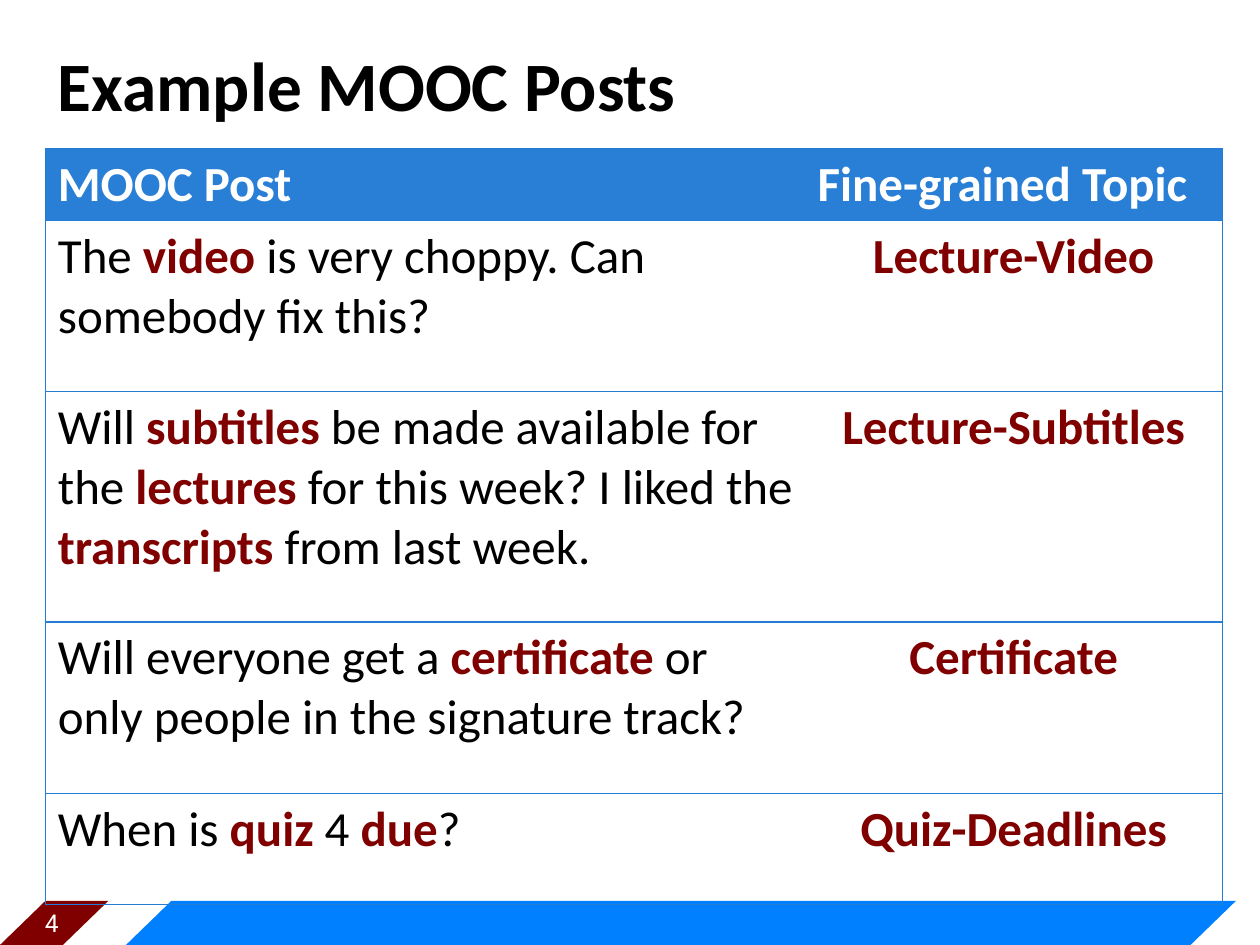
"""Build a slide with a table of example MOOC posts and their topics."""
from lxml import etree
from pptx import Presentation
from pptx.dml.color import RGBColor
from pptx.enum.shapes import MSO_SHAPE
from pptx.enum.text import MSO_ANCHOR, PP_ALIGN
from pptx.oxml.ns import qn
from pptx.util import Inches, Pt

PARALLELOGRAM = MSO_SHAPE.PARALLELOGRAM
MIDDLE = MSO_ANCHOR.MIDDLE
LEFT, CENTER = PP_ALIGN.LEFT, PP_ALIGN.CENTER
BLACK = RGBColor(0x00, 0x00, 0x00)
WHITE = RGBColor(0xFF, 0xFF, 0xFF)
MAROON = RGBColor(0x80, 0x00, 0x00)
BAND_BLUE = RGBColor(0x00, 0x80, 0xFF)
HEADER_BLUE = RGBColor(0x29, 0x7F, 0xD5)
BORDER_BLUE = RGBColor(0x24, 0x7C, 0xD5)
PLAIN_TABLE_STYLE = "{2D5ABB26-0587-4C30-8999-92F81FD0307C}"

presentation = Presentation()
presentation.slide_width, presentation.slide_height = Inches(10), Inches(7.5)
COLUMN = presentation.slide_width / 100
ROW = presentation.slide_height / 100
slide = presentation.slides.add_slide(presentation.slide_layouts[5])


def add_run(paragraph, text, size, color, bold=False, font="Calibri"):
    run = paragraph.add_run()
    run.text = text
    run.font.name, run.font.size, run.font.bold = font, Pt(size), bold
    run.font.color.rgb = color


def add_border(cell, side):
    line = etree.SubElement(cell._tc.get_or_add_tcPr(), qn(f"a:ln{side}"), w=str(Pt(0.75)))
    fill = etree.SubElement(line, qn("a:solidFill"))
    etree.SubElement(fill, qn("a:srgbClr"), val=str(BORDER_BLUE))


for left, width, color in [(9.8, 88.3, BAND_BLUE), (-0.2, 8.8, MAROON)]:
    band = slide.shapes.add_shape(
        PARALLELOGRAM, int(left * COLUMN), int(95.33 * ROW), int(width * COLUMN), int(4.93 * ROW))
    band.adjustments[0] = 1.03
    band.shadow.inherit = False
    band.fill.solid()
    band.fill.fore_color.rgb = color
    band.line.fill.background()

number = slide.shapes.add_textbox(
    int(1.2 * COLUMN), int(95.33 * ROW), int(5.8 * COLUMN), int(4.53 * ROW)).text_frame
number.word_wrap = True
number.vertical_anchor = MIDDLE
number.paragraphs[0].alignment = CENTER
add_run(number.paragraphs[0], "4", 14, WHITE, font="Roboto")

title = slide.shapes.title
title.left, title.top = int(3.6 * COLUMN), int(3.73 * ROW)
title.width, title.height = int(93.7 * COLUMN), int(10.27 * ROW)
title.text_frame.vertical_anchor = MIDDLE
title_paragraph = title.text_frame.paragraphs[0]
title_paragraph.alignment = LEFT
add_run(title_paragraph, "Example MOOC Posts", 39.6, BLACK, True)

posts = [
    ("*MOOC Post*", "*Fine-grained Topic*", 7.6),
    ("The *video *is very choppy. Can somebody fix this?", "*Lecture-Video*", 18.1),
    ("Will *subtitles* be made available for the *lectures *for this week? "
     "I liked the *transcripts *from last week.", "*Lecture-Subtitles*", 24.4),
    ("Will everyone get a *certificate* or only people in the signature track?",
     "*Certificate*", 18.1),
    ("When is *quiz* 4 *due*?", "*Quiz-Deadlines*", 11.8),
]
frame = slide.shapes.add_table(
    len(posts), 2, int(3.6 * COLUMN), int(15.73 * ROW), int(93.4 * COLUMN), int(80 * ROW))
table = frame.table
table._tbl.tblPr.find(qn("a:tableStyleId")).text = PLAIN_TABLE_STYLE
table.columns[0].width, table.columns[1].width = int(60.3 * COLUMN), int(33.1 * COLUMN)

for row_index, (post, topic, height) in enumerate(posts):
    table.rows[row_index].height = int(height * ROW)
    header = row_index == 0
    for column_index, text in enumerate((post, topic)):
        cell = table.cell(row_index, column_index)
        for side in ("LTB", "RTB")[column_index]:
            add_border(cell, side)
        if header:
            cell.fill.solid()
            cell.fill.fore_color.rgb = HEADER_BLUE
        else:
            cell.fill.background()
        paragraph = cell.text_frame.paragraphs[0]
        paragraph.alignment = CENTER if column_index and not header else LEFT
        for part_index, part in enumerate(text.split("*")):
            keyword = part_index % 2 == 1
            color = WHITE if header else MAROON if keyword else BLACK
            if part:
                add_run(paragraph, part, 28, color, keyword)

presentation.save("out.pptx")
